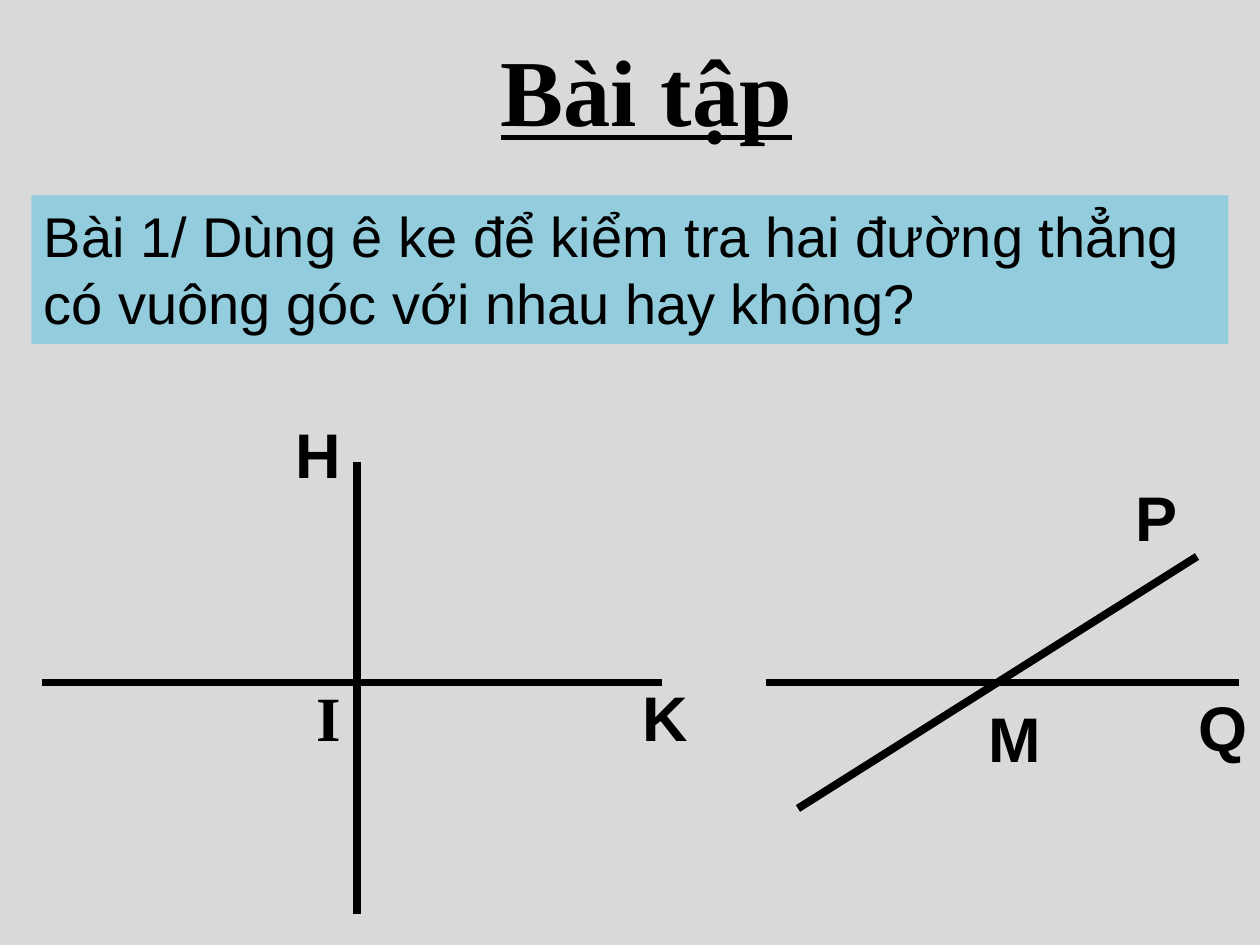
from lxml import etree
from pptx import Presentation
from pptx.dml.color import RGBColor
from pptx.enum.shapes import MSO_CONNECTOR, MSO_SHAPE
from pptx.enum.text import MSO_ANCHOR, MSO_AUTO_SIZE, PP_ALIGN
from pptx.oxml.ns import qn
from pptx.util import Pt

BLACK, GREY, BLUE = "000000", "D9D9D9", "93CDDD"
SANS, SERIF = "Arial", "Times New Roman"


def rgb(value):
    return RGBColor.from_string(value)


def write(sp, text, size, font=SANS, bold=False):
    """Fill a shape with one left-aligned run and return that run."""
    tf = sp.text_frame
    tf.word_wrap = True
    tf.auto_size = MSO_AUTO_SIZE.SHAPE_TO_FIT_TEXT
    tf.vertical_anchor = MSO_ANCHOR.TOP
    p = tf.paragraphs[0]
    p.alignment = PP_ALIGN.LEFT
    r = p.add_run()
    r.text = text
    r.font.size = Pt(size)
    r.font.name = font
    r.font.bold = bold
    r.font.color.rgb = rgb(BLACK)
    return r


prs = Presentation()
prs.slide_width, prs.slide_height = Pt(720), Pt(540)
s = prs.slides.add_slide(prs.slide_layouts[6])
s.background.fill.solid()
s.background.fill.fore_color.rgb = rgb(GREY)

# Title
sp = s.shapes.add_textbox(Pt(279), Pt(15), Pt(258), Pt(72.7))
r = write(sp, "Bài tập", 54, SERIF, bold=True)
r.font.underline = True

# Exercise
sp = s.shapes.add_shape(MSO_SHAPE.RECTANGLE, Pt(18), Pt(111.6), Pt(684), Pt(85))
sp.shadow.inherit = False
sp.fill.solid()
sp.fill.fore_color.rgb = rgb(BLUE)
sp.line.fill.background()
write(sp, "Bài 1/ Dùng ê ke để kiểm tra hai đường thẳng có vuông góc với nhau hay không?", 32)

# Two pairs of crossing lines: x1, y1, x2, y2
lines = [
    (204, 264, 204, 522),
    (24, 390, 378, 390),
    (438, 390, 708, 390),
    (684, 318, 456, 462),
]
for x1, y1, x2, y2 in lines:
    line = s.shapes.add_connector(MSO_CONNECTOR.STRAIGHT, Pt(x1), Pt(y1), Pt(x2), Pt(y2))
    line.line.width = Pt(4.5)
    line.line.color.rgb = rgb(BLACK)
    etree.SubElement(line._element.spPr, qn("a:effectLst"))

# Point names
points = [
    ("H", 162, 234, SANS),
    ("I", 174, 384, SERIF),
    ("K", 360, 384, SANS),
    ("M", 558, 396, SANS),
    ("P", 642, 270, SANS),
    ("Q", 678, 390, SANS),
]
for name, x, y, font in points:
    sp = s.shapes.add_textbox(Pt(x), Pt(y), Pt(48), Pt(50.5))
    write(sp, name, 36, font, bold=True)

prs.save("out.pptx")
